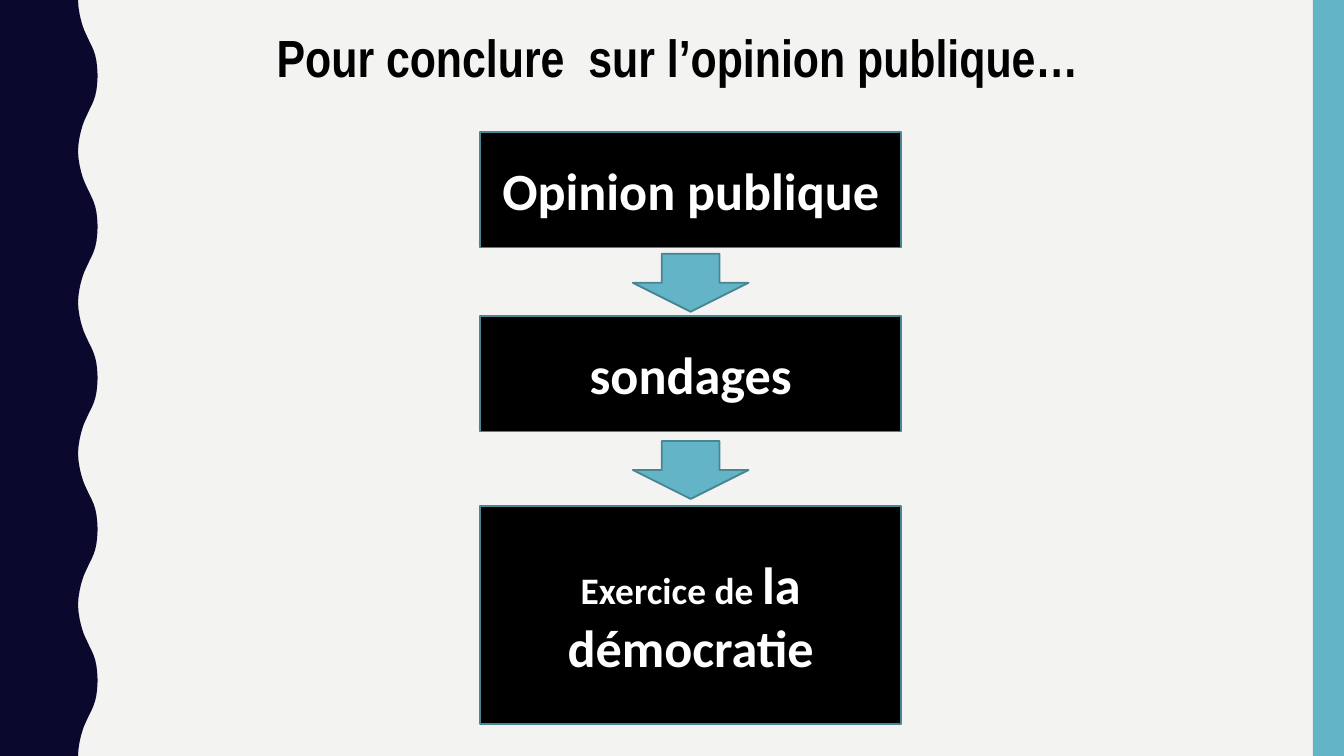
from dataclasses import dataclass
from typing import NamedTuple

from pptx import Presentation
from pptx.dml.color import RGBColor
from pptx.enum.shapes import MSO_SHAPE
from pptx.enum.text import MSO_ANCHOR, MSO_AUTO_SIZE, PP_ALIGN
from pptx.util import Pt

RECT, ARROW = MSO_SHAPE.RECTANGLE, MSO_SHAPE.DOWN_ARROW
TOP, MIDDLE = MSO_ANCHOR.TOP, MSO_ANCHOR.MIDDLE
CENTER, NO_FIT = PP_ALIGN.CENTER, MSO_AUTO_SIZE.NONE


@dataclass(frozen=True)
class Theme:
    paper: str = "F3F3F2"
    navy: str = "0B082E"
    teal: str = "62B4C6"
    edge: str = "498592"
    black: str = "000000"
    white: str = "FFFFFF"
    head: str = "Arial Narrow"
    body: str = "Calibri"
    large: int = 28
    small: int = 20


class Area(NamedTuple):
    left: float
    top: float
    width: float
    height: float


class Phrase(NamedTuple):
    text: str
    size: int


class Step(NamedTuple):
    top: float
    height: float
    phrases: list[Phrase]


THEME = Theme()
WIDTH, HEIGHT = 720, 405
MID = 370
BOX_WIDTH = 225.4
ARROW_WIDTH, ARROW_HEIGHT = 62, 31
WAVES = 5
# One half wave, from trough to crest: x, and y from its start
CURVE = [(41.8, 0), (42.1, 4.2), (42.7, 7.8), (43.4, 10.9), (44.2, 13.6),
         (45, 15.9), (46, 18.1), (47, 20.3), (48, 22.4), (49.1, 24.6),
         (50.1, 26.9), (51, 29.6), (51.7, 32.8), (52.1, 36.4), (52.3, 40.5)]
STEPS = [
    Step(70.6, 62, [Phrase("Opinion publique", THEME.large)]),
    Step(169.2, 62, [Phrase("sondages", THEME.large)]),
    Step(270.9, 117, [Phrase("Exercice de ", THEME.small),
                      Phrase("la démocratie", THEME.large)]),
]
ARROW_TOPS = [136, 236.3]


def paint(shape, fill: str, line: str | None = None) -> None:
    shape.shadow.inherit = False
    shape.fill.solid()
    shape.fill.fore_color.rgb = RGBColor.from_string(fill)
    if line:
        shape.line.color.rgb = RGBColor.from_string(line)
        shape.line.width = Pt(1)
    else:
        shape.line.fill.background()


def add_block(slide, kind, area: Area, fill: str, line: str | None = None):
    shape = slide.shapes.add_shape(kind, *map(Pt, area))
    paint(shape, fill, line)
    return shape


def style(para, face: str, color: str) -> None:
    para.alignment = CENTER
    para.font.name = face
    para.font.bold = True
    para.font.color.rgb = RGBColor.from_string(color)


def add_wave(slide) -> None:
    """Draw the left band, its right edge mirrored at each crest."""
    span = HEIGHT / WAVES
    edge = []
    for wave in range(WAVES):
        base = wave * span
        edge += [(x, base + y) for x, y in CURVE]
        edge += [(x, base + span - y) for x, y in CURVE[-2::-1]]
    pen = slide.shapes.build_freeform(0, 0)
    pen.add_line_segments([(Pt(x), Pt(y)) for x, y in edge + [(0, HEIGHT)]])
    paint(pen.convert_to_shape(), THEME.navy)


def set_title(slide, text: str) -> None:
    title = slide.shapes.title
    title.left, title.top, title.width, title.height = map(
        Pt, Area(63.4, 10.8, 599, 39.6))
    frame = title.text_frame
    frame.text = text
    frame.auto_size, frame.word_wrap = NO_FIT, True
    frame.vertical_anchor = TOP
    frame.margin_left = frame.margin_right = Pt(5)
    frame.margin_top = frame.margin_bottom = Pt(2.9)
    para = frame.paragraphs[0]
    style(para, THEME.head, THEME.black)
    para.font.size = Pt(THEME.large)


def add_step(slide, step: Step) -> None:
    area = Area(MID - BOX_WIDTH / 2, step.top, BOX_WIDTH, step.height)
    box = add_block(slide, RECT, area, THEME.black, THEME.edge)
    frame = box.text_frame
    frame.word_wrap, frame.vertical_anchor = True, MIDDLE
    para = frame.paragraphs[0]
    style(para, THEME.body, THEME.white)
    for phrase in step.phrases:
        run = para.add_run()
        run.text, run.font.size = phrase.text, Pt(phrase.size)


def main() -> None:
    deck = Presentation()
    deck.slide_width, deck.slide_height = Pt(WIDTH), Pt(HEIGHT)
    slide = deck.slides.add_slide(deck.slide_layouts.get_by_name("Title Only"))
    back = slide.background.fill
    back.solid()
    back.fore_color.rgb = RGBColor.from_string(THEME.paper)

    add_wave(slide)
    add_block(slide, RECT, Area(703.4, 0, 16.6, HEIGHT), THEME.teal)
    set_title(slide, "Pour conclure  sur l’opinion publique…")
    for step in STEPS:
        add_step(slide, step)
    for top in ARROW_TOPS:
        area = Area(MID - ARROW_WIDTH / 2, top, ARROW_WIDTH, ARROW_HEIGHT)
        add_block(slide, ARROW, area, THEME.teal, THEME.edge)
    deck.save("out.pptx")


if __name__ == "__main__":
    main()
